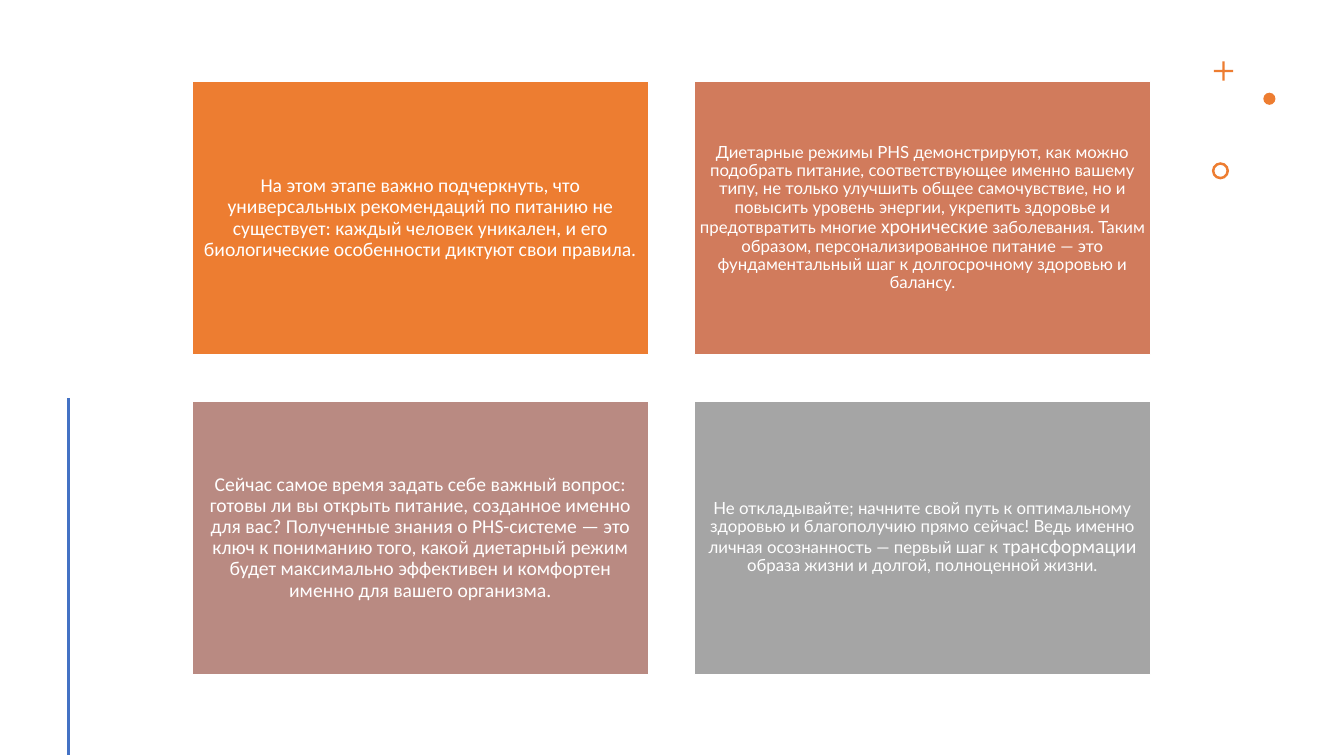
import pptx
import pptx.util
import pptx.dml.color
import pptx.enum.shapes
import pptx.enum.text
import pptx.oxml.ns
import lxml.etree

Inches, Pt = pptx.util.Inches, pptx.util.Pt
RGB = pptx.dml.color.RGBColor.from_string
SHAPE = pptx.enum.shapes.MSO_SHAPE

THEME = {
    "accent": "ED7D31", "rule": "4472C4", "white": "FFFFFF",
    "main": ("Calibri", 14), "dense": ("Lato", 12),
}

# Cards, row by row: fill, inset, runs as (type style, text)
CARDS = [
    ("ED7D31", 0.06, [
        ("main", "На этом этапе важно подчеркнуть, что универсальных рекомендаций по питанию "
                 "не существует: каждый человек уникален, и его биологические особенности "
                 "диктуют свои правила.")]),
    ("D17B5C", 0.05, [
        ("dense", "Диетарные режимы PHS демонстрируют, как можно подобрать питание, "
                  "соответствующее именно вашему типу, не только улучшить общее самочувствие, "
                  "но и повысить уровень энергии, укрепить здоровье и предотвратить многие "),
        ("main", "хронические"),
        ("dense", " заболевания. Таким образом, персонализированное питание — это "
                  "фундаментальный шаг к долгосрочному здоровью и балансу.")]),
    ("B98A82", 0.06, [
        ("main", "Сейчас самое время задать себе важный вопрос: готовы ли вы открыть питание, "
                 "созданное именно для вас? Полученные знания о PHS-системе — это ключ к "
                 "пониманию того, какой диетарный режим будет максимально эффективен и "
                 "комфортен именно для вашего организма.")]),
    ("A5A5A5", 0.05, [
        ("dense", "Не откладывайте; начните свой путь к оптимальному здоровью и благополучию "
                  "прямо сейчас! Ведь именно личная осознанность — первый шаг к "),
        ("main", "трансформации"),
        ("dense", " образа жизни и долгой, полноценной жизни.")]),
]
COLUMNS = 2
LEFT, TOP, WIDTH, HEIGHT = 1.91, 0.81, 4.52, 2.71
STEP_X, STEP_Y = 4.98, 3.17

# Ornaments: shape, left, top, size, adjustment
ORNAMENTS = [
    (SHAPE.CROSS, 12.04, 0.61, 0.19, 0.44),
    (SHAPE.OVAL, 12.53, 0.92, 0.12, None),
    (SHAPE.DONUT, 12.02, 1.61, 0.17, 0.15),
]


def add_filled(s, kind, left, top, width, height, color):
    sp = s.shapes.add_shape(kind, Inches(left), Inches(top), Inches(width), Inches(height))
    sp.shadow.inherit = False
    sp.fill.solid()
    sp.fill.fore_color.rgb = RGB(color)
    sp.line.fill.background()
    return sp


def add_card(s, index, color, inset, runs):
    row, col = divmod(index, COLUMNS)
    sp = add_filled(s, SHAPE.RECTANGLE, LEFT + col * STEP_X, TOP + row * STEP_Y,
                    WIDTH, HEIGHT, color)
    sp.line.color.rgb = RGB(THEME["white"])
    sp.line.width = Pt(1)
    tf = sp.text_frame
    tf.word_wrap = True
    tf.vertical_anchor = pptx.enum.text.MSO_ANCHOR.MIDDLE
    tf.margin_left = tf.margin_right = tf.margin_top = tf.margin_bottom = Inches(inset)
    p = tf.paragraphs[0]
    p.alignment = pptx.enum.text.PP_ALIGN.CENTER
    p.line_spacing = 0.9
    p.font.color.rgb = RGB(THEME["white"])
    for style, text in runs:
        r = p.add_run()
        r.text = text
        r.font.name, size = THEME[style]
        r.font.size = Pt(size)
        r.font.color.rgb = RGB(THEME["white"])


def main():
    prs = pptx.Presentation()
    prs.slide_width, prs.slide_height = Inches(13.33), Inches(7.5)
    s = prs.slides.add_slide(prs.slide_layouts[6])

    # Ornaments at top right
    for kind, left, top, size, adjustment in ORNAMENTS:
        sp = add_filled(s, kind, left, top, size, size, THEME["accent"])
        if adjustment is not None:
            sp.adjustments[0] = adjustment

    # Vertical rule at left
    rule = s.shapes.add_connector(pptx.enum.shapes.MSO_CONNECTOR.STRAIGHT,
                                  Inches(0.68), Inches(3.95), Inches(0.68), Inches(7.49))
    rule.line.color.rgb = RGB(THEME["rule"])
    rule.line.width = Pt(2)
    lxml.etree.SubElement(rule.element.spPr, pptx.oxml.ns.qn("a:effectLst"))

    # Text cards
    for index, card in enumerate(CARDS):
        add_card(s, index, *card)

    prs.save("out.pptx")


if __name__ == "__main__":
    main()
